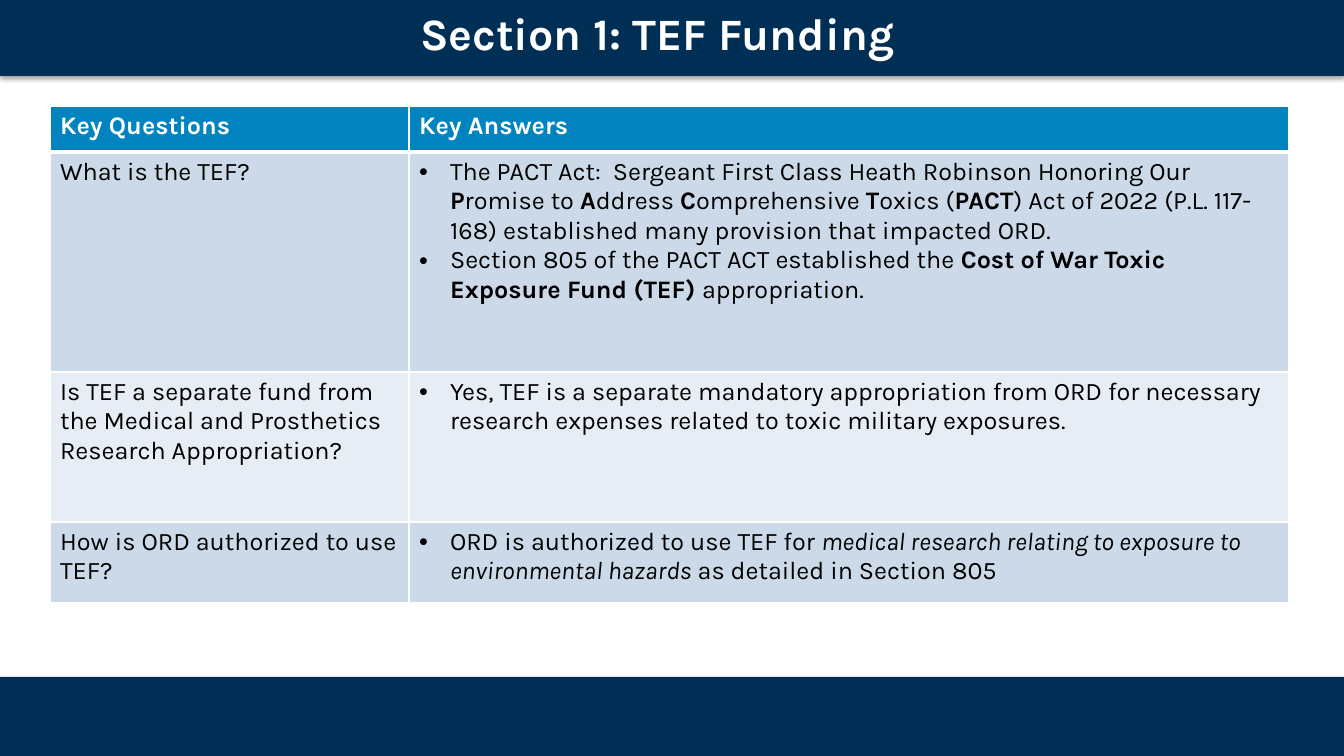
import pptx
import pptx.util
import pptx.dml.color
import pptx.enum.shapes
import pptx.enum.text
import pptx.oxml
import pptx.oxml.ns

# Content: each answer is a list of bullets, each bullet a list of (text, style)
TITLE = "Section 1: TEF Funding"
HEADINGS = ("Key Questions", "Key Answers")
QUESTIONS = [
    ("What is the TEF?", [
        [("The PACT Act:  Sergeant First Class Heath Robinson Honoring Our ", ""),
         ("P", "bold"), ("romise to ", ""), ("A", "bold"), ("ddress ", ""),
         ("C", "bold"), ("omprehensive ", ""), ("T", "bold"), ("oxics (", ""),
         ("PACT", "bold"),
         (") Act of 2022 (P.L. 117-168) established many provision that impacted ORD.", "")],
        [("Section 805 of the PACT ACT established the ", ""),
         ("Cost of War Toxic Exposure Fund (TEF) ", "bold"), ("appropriation.", "")],
    ]),
    ("Is TEF a separate fund from the Medical and Prosthetics Research Appropriation?", [
        [("Yes, TEF is a separate mandatory appropriation from ORD for necessary "
          "research expenses related to toxic military exposures.", "")],
    ]),
    ("How is ORD authorized to use TEF?", [
        [("ORD is authorized to use TEF for ", ""),
         ("medical research relating to exposure to environmental hazards", "italic"),
         (" as detailed in Section 805", "")],
    ]),
]
COLORS = {"navy": "002F56", "header": "0083BE", "odd": "CCD9E8", "even": "E7EDF4",
          "white": "FFFFFF", "black": "000000"}
FONT = "Karla"

# Layout in px
SLIDE_W, SLIDE_H = 1344, 756
BARS = {"footer": (0, 677, SLIDE_W, 81), "header": (0, 0, SLIDE_W, 76)}
TITLE_BOX = (-21, 0, 1357, 65)
TABLE_LEFT, TABLE_TOP = 50, 106
COLUMNS = (359, 880)
ROWS = (46, 220, 150, 81)
BULLET_INDENT = 31
PX = 914400 / 100.8


def px(length):
    return pptx.util.Emu(round(length * PX))


def rgb(name):
    return pptx.dml.color.RGBColor.from_string(COLORS[name])


def add_xml(parent, xml):
    tag, rest = xml.split(" ", 1)
    parent.append(pptx.oxml.parse_xml(f"<{tag} {pptx.oxml.ns.nsdecls('a')} {rest}"))


def add_run(paragraph, text, size, color, style=""):
    run = paragraph.add_run()
    run.text = text
    values = {"name": FONT, "size": pptx.util.Pt(size),
              "bold": style == "bold", "italic": style == "italic"}
    for key, value in values.items():
        setattr(run.font, key, value)
    run.font.color.rgb = rgb(color)


def add_bullet(paragraph):
    properties = paragraph._p.get_or_add_pPr()
    properties.set("marL", str(px(BULLET_INDENT)))
    properties.set("indent", str(-px(BULLET_INDENT)))
    add_xml(properties, '<a:buFont typeface="Arial"/>'[1:])
    add_xml(properties, '<a:buChar char="•"/>'[1:])


def format_cell(cell, fill, bottom=1):
    properties = cell._tc.get_or_add_tcPr()
    for side, points in (("L", 1), ("R", 1), ("T", 1), ("B", bottom)):
        add_xml(properties, f'a:ln{side} w="{points * 12700}"><a:solidFill>'
                f'<a:srgbClr val="{COLORS["white"]}"/></a:solidFill></a:ln{side}>')
    cell.fill.solid()
    cell.fill.fore_color.rgb = rgb(fill)


def main():
    deck = pptx.Presentation()
    deck.slide_width, deck.slide_height = px(SLIDE_W), px(SLIDE_H)
    slide = deck.slides.add_slide(deck.slide_layouts[5])

    # Navy bars, the upper one with a soft shadow
    for name, box in BARS.items():
        bar = slide.shapes.add_shape(pptx.enum.shapes.MSO_SHAPE.RECTANGLE, *map(px, box))
        bar.fill.solid()
        bar.fill.fore_color.rgb = rgb("navy")
        bar.line.fill.background()
        if name == "footer":
            bar.shadow.inherit = False
        else:
            add_xml(bar._element.spPr, 'a:effectLst ><a:outerShdw blurRad="39370" '
                    'dist="22860" dir="5400000" rotWithShape="0"><a:srgbClr '
                    f'val="{COLORS["black"]}"><a:alpha val="35000"/></a:srgbClr>'
                    '</a:outerShdw></a:effectLst>')

    # Table
    table = slide.shapes.add_table(len(ROWS), len(COLUMNS), px(TABLE_LEFT), px(TABLE_TOP),
                                   px(sum(COLUMNS)), px(sum(ROWS))).table
    for column, width in zip(table.columns, COLUMNS):
        column.width = px(width)
    for row, height in zip(table.rows, ROWS):
        row.height = px(height)

    for index, heading in enumerate(HEADINGS):
        cell = table.cell(0, index)
        format_cell(cell, "header", bottom=3)
        add_run(cell.text_frame.paragraphs[0], heading, 18, "white", "bold")

    for index, (question, answer) in enumerate(QUESTIONS, 1):
        question_cell, answer_cell = table.cell(index, 0), table.cell(index, 1)
        for cell in (question_cell, answer_cell):
            format_cell(cell, "odd" if index % 2 else "even")
        add_run(question_cell.text_frame.paragraphs[0], question, 18, "black")
        frame = answer_cell.text_frame
        for number, bullet in enumerate(answer):
            paragraph = frame.add_paragraph() if number else frame.paragraphs[0]
            add_bullet(paragraph)
            for text, style in bullet:
                add_run(paragraph, text, 18, "black", style)

    # Title, brought in front of the upper bar
    title = slide.shapes.title
    title.left, title.top, title.width, title.height = map(px, TITLE_BOX)
    title.text_frame.vertical_anchor = pptx.enum.text.MSO_ANCHOR.MIDDLE
    heading = title.text_frame.paragraphs[0]
    heading.alignment = pptx.enum.text.PP_ALIGN.CENTER
    add_run(heading, TITLE, 32, "white", "bold")
    slide.shapes._spTree.append(title._element)

    deck.save("out.pptx")


if __name__ == "__main__":
    main()
